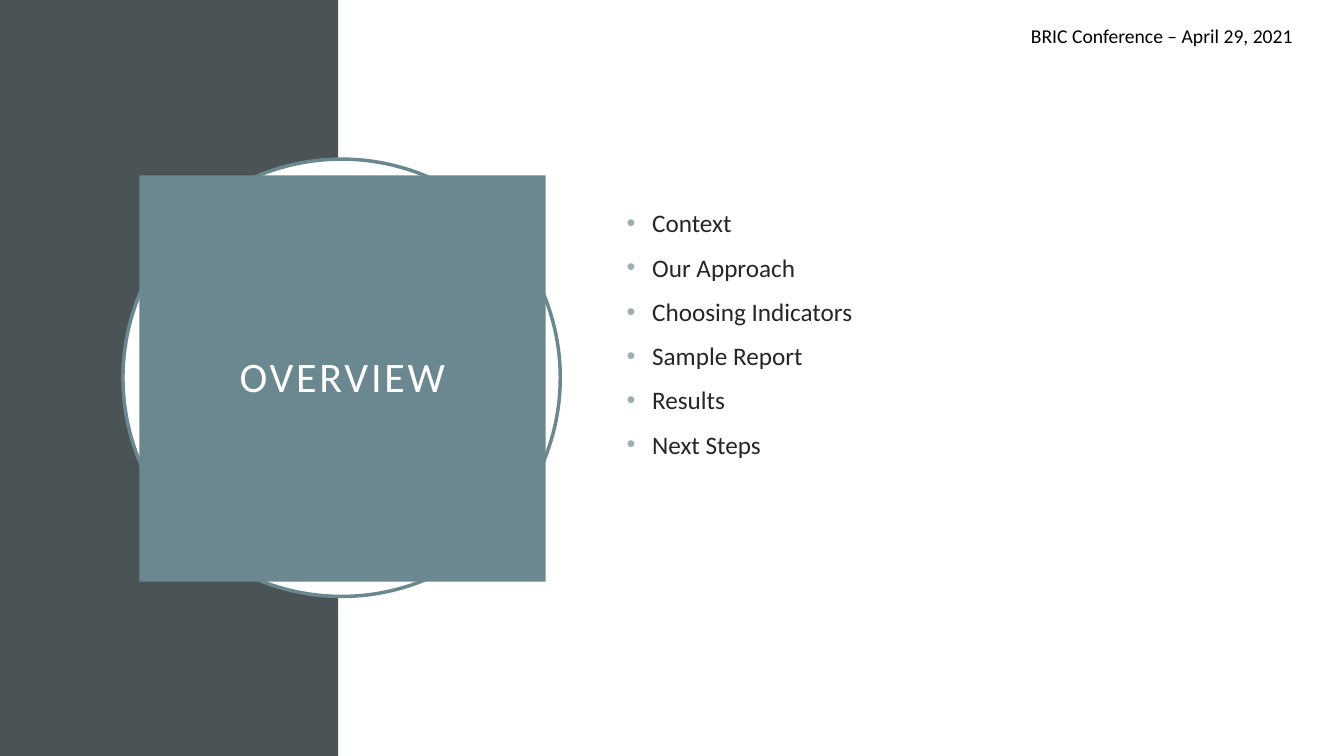
from dataclasses import dataclass

from lxml import etree
from pptx import Presentation
from pptx import util as u
from pptx.dml.color import RGBColor
from pptx.enum import shapes, text
from pptx.oxml import ns

SLATE = RGBColor(0x4A, 0x53, 0x56)
TEAL = RGBColor(0x6B, 0x88, 0x91)
MIST = RGBColor(0x9B, 0xAF, 0xB5)
INK = RGBColor(0x26, 0x26, 0x26)
BLACK = RGBColor(0, 0, 0)
WHITE = RGBColor(0xFF, 0xFF, 0xFF)
FONT = "Calibri"
WIDE, HIGH, SPLIT = 33.87, 19.05, 8.53
TOPICS = ["Context", "Our Approach", "Choosing Indicators",
          "Sample Report", "Results", "Next Steps"]


@dataclass
class Box:
    left: float
    top: float
    width: float
    height: float


@dataclass
class Panel:
    kind: shapes.MSO_SHAPE
    box: Box
    fill: RGBColor
    edge: RGBColor | None = None


PANELS = [
    Panel(shapes.MSO_SHAPE.RECTANGLE, Box(0, 0, SPLIT, HIGH), SLATE),
    Panel(shapes.MSO_SHAPE.RECTANGLE, Box(SPLIT, 0, WIDE - SPLIT, HIGH), WHITE),
    Panel(shapes.MSO_SHAPE.OVAL, Box(3.1, 4.01, 11.02, 11.02), WHITE, TEAL),
]


def place(item, box: Box) -> None:
    item.left, item.top = u.Cm(box.left), u.Cm(box.top)
    item.width, item.height = u.Cm(box.width), u.Cm(box.height)


def draw(slide, panel: Panel) -> None:
    box = panel.box
    item = slide.shapes.add_shape(panel.kind, u.Cm(box.left), u.Cm(box.top),
                                  u.Cm(box.width), u.Cm(box.height))
    item.shadow.inherit = False
    item.fill.solid()
    item.fill.fore_color.rgb = panel.fill
    if panel.edge is None:
        item.line.fill.background()
    else:
        item.line.color.rgb = panel.edge
        item.line.width = u.Pt(2.5)


def bullet(para, color: RGBColor) -> None:
    props = para._p.get_or_add_pPr()
    indent = u.Cm(0.64)
    props.set("marL", str(indent))
    props.set("indent", str(-indent))
    tint = etree.SubElement(props, ns.qn("a:buClr"))
    etree.SubElement(tint, ns.qn("a:srgbClr"), val=str(color))
    etree.SubElement(props, ns.qn("a:buFont"), typeface="Arial")
    etree.SubElement(props, ns.qn("a:buChar"), char="•")


def write(frame, lines: list[str], *, size: float, color: RGBColor,
          align=text.PP_ALIGN.LEFT, anchor=text.MSO_ANCHOR.TOP,
          fit=text.MSO_AUTO_SIZE.NONE, wrap: bool = True, leading: float = 1.0,
          before: float = 0, track: float = 0,
          dot: RGBColor | None = None) -> None:
    frame.word_wrap = wrap
    frame.auto_size = fit
    frame.vertical_anchor = anchor
    for i, line in enumerate(lines):
        para = frame.add_paragraph() if i else frame.paragraphs[0]
        para.alignment = align
        para.line_spacing = leading
        para.space_before = u.Pt(before)
        if dot is not None:
            bullet(para, dot)
        run = para.add_run()
        run.text = line
        run.font.name = FONT
        run.font.size = u.Pt(size)
        run.font.color.rgb = color
        if track:
            run._r.get_or_add_rPr().set("spc", str(round(track * 100)))


def main() -> None:
    deck = Presentation()
    deck.slide_width, deck.slide_height = u.Cm(WIDE), u.Cm(HIGH)
    slide = deck.slides.add_slide(deck.slide_layouts[1])
    title, body = slide.placeholders

    # Background halves and ring
    for panel in PANELS:
        draw(slide, panel)

    # Placeholders go in front of the panels
    for item in (title, body):
        slide.shapes._spTree.append(item._element)

    # Title block
    place(title, Box(3.51, 4.42, 10.24, 10.24))
    title.fill.solid()
    title.fill.fore_color.rgb = TEAL
    frame = title.text_frame
    frame.margin_left = frame.margin_right = u.Cm(0.51)
    frame.margin_top = frame.margin_bottom = u.Cm(0.51)
    write(frame, ["OVERVIEW"], size=30, color=WHITE, track=2, leading=0.9,
          align=text.PP_ALIGN.CENTER, anchor=text.MSO_ANCHOR.MIDDLE)

    # Topic list, raised by a deep lower margin
    place(body, Box(15.54, 3.89, 14.78, 11.25))
    body.text_frame.margin_bottom = u.Cm(2.35)
    write(body.text_frame, TOPICS, size=18, color=INK, before=10, dot=MIST,
          anchor=text.MSO_ANCHOR.MIDDLE)

    # Event line
    event = slide.shapes.add_textbox(u.Cm(25.73), u.Cm(0.48),
                                     u.Cm(7.39), u.Cm(0.86))
    write(event.text_frame, ["BRIC Conference – April 29, 2021"], size=14,
          color=BLACK, wrap=False, fit=text.MSO_AUTO_SIZE.SHAPE_TO_FIT_TEXT)

    deck.save("out.pptx")


if __name__ == "__main__":
    main()
